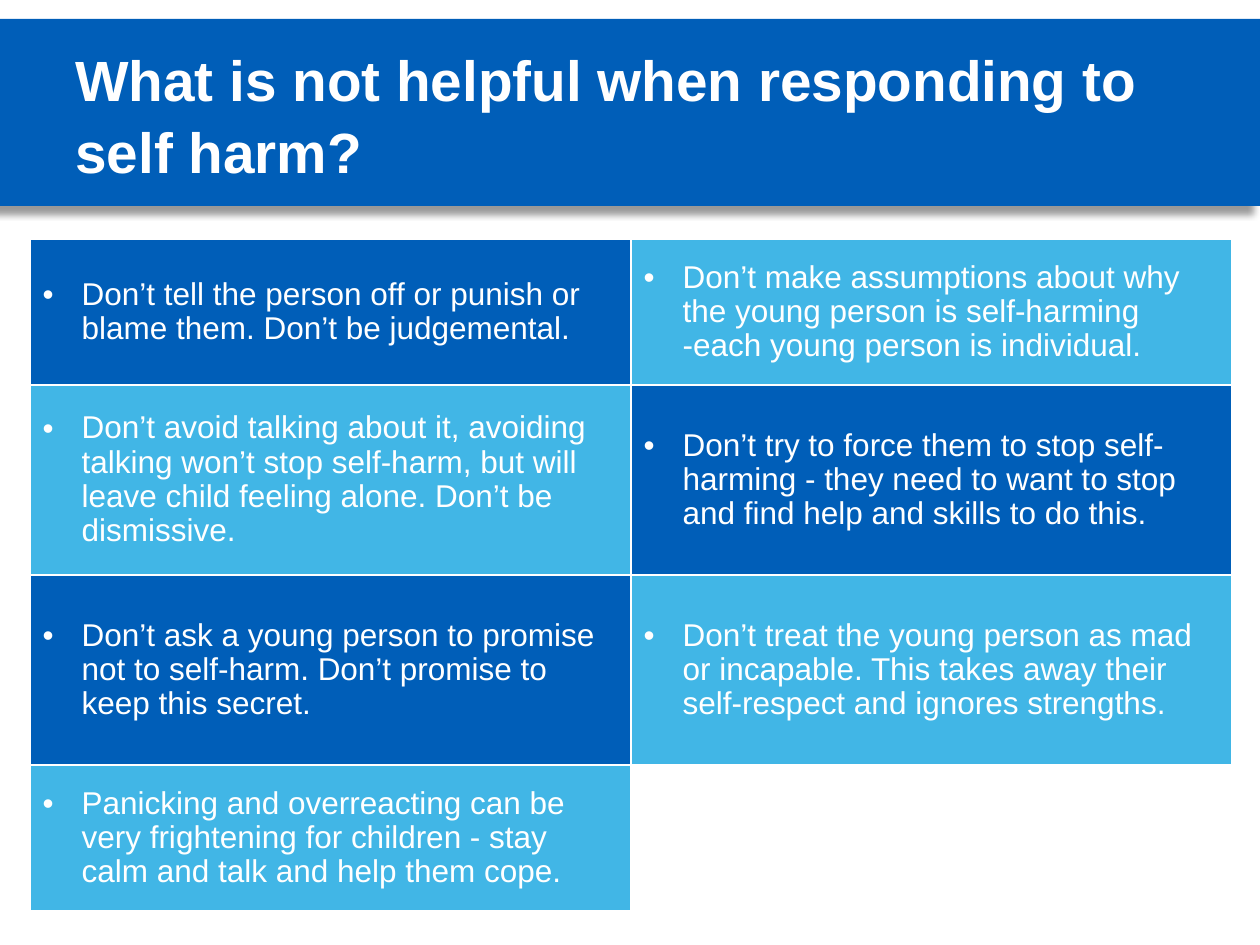
from dataclasses import dataclass

from lxml import etree
from pptx import Presentation
from pptx.dml.color import RGBColor
from pptx.enum.shapes import MSO_SHAPE
from pptx.enum.text import MSO_ANCHOR
from pptx.oxml import parse_xml
from pptx.oxml.ns import nsdecls, qn
from pptx.util import Pt

RECTANGLE = MSO_SHAPE.RECTANGLE
MIDDLE = MSO_ANCHOR.MIDDLE
EMU_PER_PX = 914400 / 126


@dataclass(frozen=True)
class Theme:
    dark: str = "005EB8"
    light: str = "41B6E6"
    white: str = "FFFFFF"
    font: str = "Arial"
    title_size: float = 32.4
    body_size: float = 18
    title_spacing: float = 1.05
    body_spacing: float = 0.97


THEME = Theme()
TITLE = "What is not helpful when responding to self harm?"
ADVICE = [
    ["Don’t tell the person off or punish or blame them. Don’t be judgemental.",
     "Don’t make assumptions about why the young person is self-harming "
     "-each young person is individual."],
    ["Don’t avoid talking about it, avoiding talking won’t stop self-harm, "
     "but will leave child feeling alone. Don’t be dismissive.",
     "Don’t try to force them to stop self-harming - they need to want to stop "
     "and find help and skills to do this."],
    ["Don’t ask a young person to promise not to self-harm. "
     "Don’t promise to keep this secret.",
     "Don’t treat the young person as mad or incapable. "
     "This takes away their self-respect and ignores strengths."],
    ["Panicking and overreacting can be very frightening for children - stay "
     "calm and talk and help them cope.", ""],
]
ROW_HEIGHTS = [146, 190, 190, 146]


def px(length):
    return round(length * EMU_PER_PX)


def fill_solid(fill, color):
    fill.solid()
    fill.fore_color.rgb = RGBColor.from_string(color)


def style_paragraph(paragraph, size, spacing, bold=False):
    paragraph.line_spacing = spacing
    for run in paragraph.runs:
        run.font.name = THEME.font
        run.font.size = Pt(size)
        run.font.bold = bold
        run.font.color.rgb = RGBColor.from_string(THEME.white)


def add_bullet(paragraph, indent):
    properties = paragraph._p.get_or_add_pPr()
    properties.set("marL", str(px(indent)))
    properties.set("indent", str(-px(indent)))
    etree.SubElement(properties, qn("a:buFont"), typeface=THEME.font)
    etree.SubElement(properties, qn("a:buChar"), char="•")


def add_borders(cell):
    """Put white 1 pt lines on all sides, ahead of the cell's fill."""
    properties = cell._tc.get_or_add_tcPr()
    for position, side in enumerate(("lnL", "lnR", "lnT", "lnB")):
        properties.insert(position, parse_xml(
            f'<a:{side} {nsdecls("a")} w="{Pt(1)}"><a:solidFill>'
            f'<a:srgbClr val="{THEME.white}"/></a:solidFill></a:{side}>'))


def add_drop_shadow(shape):
    shape._element.spPr.append(parse_xml(
        f'<a:effectLst {nsdecls("a")}><a:outerShdw blurRad="{Pt(4)}" '
        f'dist="{Pt(6)}" dir="8100000" algn="tr" rotWithShape="0">'
        '<a:srgbClr val="000000"><a:alpha val="40000"/></a:srgbClr>'
        '</a:outerShdw></a:effectLst>'))


def add_title_banner(slide, left, top, width, height):
    banner = slide.shapes.add_shape(
        RECTANGLE, px(left), px(top), px(width), px(height))
    fill_solid(banner.fill, THEME.dark)
    banner.line.fill.background()
    add_drop_shadow(banner)

    title = slide.shapes.add_textbox(
        px(left + 63), px(top + 15), px(width - 126), px(height - 29))
    frame = title.text_frame
    frame.word_wrap = True
    frame.vertical_anchor = MIDDLE
    frame.text = TITLE
    style_paragraph(frame.paragraphs[0], THEME.title_size,
                    THEME.title_spacing, bold=True)


def add_advice_table(slide, left, top, width):
    """Place the advice in cells that alternate like a chessboard."""
    columns = len(ADVICE[0])
    table = slide.shapes.add_table(
        len(ADVICE), columns, px(left), px(top), px(width),
        px(sum(ROW_HEIGHTS))).table
    table.first_row = False
    table.horz_banding = False
    for column in table.columns:
        column.width = px(width / columns)
    for r, (height, texts) in enumerate(zip(ROW_HEIGHTS, ADVICE)):
        table.rows[r].height = px(height)
        for c, advice in enumerate(texts):
            cell = table.cell(r, c)
            cell.vertical_anchor = MIDDLE
            if advice:
                fill_solid(cell.fill, THEME.light if (r + c) % 2 else THEME.dark)
                cell.text_frame.text = advice
                paragraph = cell.text_frame.paragraphs[0]
                style_paragraph(paragraph, THEME.body_size, THEME.body_spacing)
                add_bullet(paragraph, 39)
            else:
                cell.fill.background()
            add_borders(cell)


def main():
    presentation = Presentation()
    presentation.slide_width = px(1260)
    presentation.slide_height = px(945)
    slide = presentation.slides.add_slide(presentation.slide_layouts[6])
    add_title_banner(slide, 0, 19, 1260, 187)
    add_advice_table(slide, 30, 239, 1202)
    presentation.save("out.pptx")


if __name__ == "__main__":
    main()
